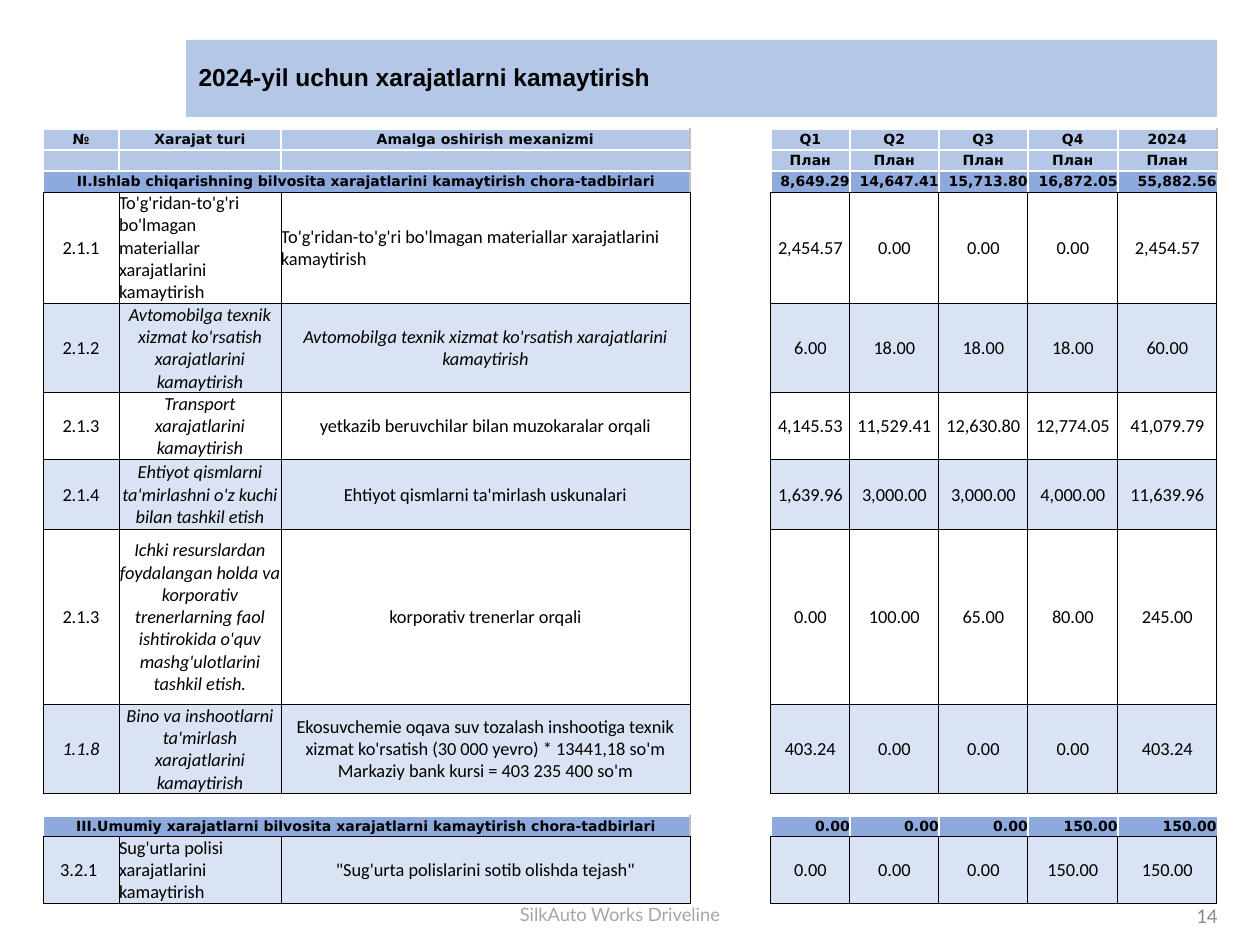
from lxml.etree import SubElement
from pptx import Presentation
from pptx.dml.color import RGBColor
from pptx.enum.text import MSO_ANCHOR, MSO_AUTO_SIZE, PP_ALIGN
from pptx.oxml.ns import qn
from pptx.util import Emu, Pt

COLORS = {"black": "000000", "white": "FFFFFF", "header": "B4C7E7",
          "section": "8EA9DB", "band": "DAE3F3", "edge": "BFBFBF",
          "footer": "A6A6A6", "number": "8C8C8C"}
LEFT, CENTER, RIGHT = PP_ALIGN.LEFT, PP_ALIGN.CENTER, PP_ALIGN.RIGHT

WHITE, GREY, BLACK = ("white", 1.5), ("edge", 1), ("black", 0.5)
COLS = [76, 162, 409, 81, 79, 89, 89, 90, 99]
SPACER, LAST = 3, 8
NUMERIC = range(4, 9)

# kind, height, texts to the left of the spacer, values to its right,
# italic columns, left-aligned columns
ROWS = [
    ("header", 21, ["№", "Xarajat turi", "Amalga oshirish mexanizmi"],
     ["Q1", "Q2", "Q3", "Q4", "2024"], (), ()),
    ("header", 21, ["", "", ""], ["План"] * 5, (), ()),
    ("section", 21,
     ["II.Ishlab chiqarishning bilvosita xarajatlarini kamaytirish chora-tadbirlari", "", ""],
     ["8,649.29", "14,647.41", "15,713.80", "16,872.05", "55,882.56"], (), NUMERIC),
    ("plain", 112,
     ["2.1.1", "To'g'ridan-to'g'ri bo'lmagan materiallar xarajatlarini kamaytirish",
      "To'g'ridan-to'g'ri bo'lmagan materiallar xarajatlarini kamaytirish"],
     ["2,454.57", "0.00", "0.00", "0.00", "2,454.57"], (), (1, 2)),
    ("band", 89,
     ["2.1.2", "Avtomobilga texnik xizmat ko'rsatish xarajatlarini kamaytirish",
      "Avtomobilga texnik xizmat ko'rsatish xarajatlarini kamaytirish"],
     ["6.00", "18.00", "18.00", "18.00", "60.00"], (1, 2), ()),
    ("plain", 67,
     ["2.1.3", "Transport xarajatlarini kamaytirish",
      "yetkazib beruvchilar bilan muzokaralar orqali"],
     ["4,145.53", "11,529.41", "12,630.80", "12,774.05", "41,079.79"], (1,), ()),
    ("band", 70,
     ["2.1.4", "Ehtiyot qismlarni ta'mirlashni o'z kuchi bilan tashkil etish",
      "Ehtiyot qismlarni ta'mirlash uskunalari"],
     ["1,639.96", "3,000.00", "3,000.00", "4,000.00", "11,639.96"], (1,), ()),
    ("plain", 175,
     ["2.1.3", "Ichki resurslardan foydalangan holda va korporativ trenerlarning faol "
      "ishtirokida o'quv mashg'ulotlarini tashkil etish.",
      "korporativ trenerlar orqali"],
     ["0.00", "100.00", "65.00", "80.00", "245.00"], (1,), ()),
    ("band", 89,
     ["1.1.8", "Bino va inshootlarni ta'mirlash xarajatlarini kamaytirish",
      "Ekosuvchemie oqava suv tozalash inshootiga texnik xizmat ko'rsatish "
      "(30 000 yevro) * 13441,18 so'm Markaziy bank kursi = 403 235 400 so'm"],
     ["403.24", "0.00", "0.00", "0.00", "403.24"], (0, 1), ()),
    ("gap", 22, [""] * 3, [""] * 5, (), ()),
    ("section", 21,
     ["III.Umumiy xarajatlarni bilvosita xarajatlarni kamaytirish chora-tadbirlari", "", ""],
     ["0.00", "0.00", "0.00", "150.00", "150.00"], (), NUMERIC),
    ("band", 67,
     ["3.2.1", "Sug'urta polisi xarajatlarini kamaytirish",
      "\"Sug'urta polislarini sotib olishda tejash\""],
     ["0.00", "0.00", "0.00", "150.00", "150.00"], (), (1,)),
]


def px(n):
    return Emu(round(n * 914400 / 126))


def rgb(name):
    return RGBColor.from_string(COLORS[name])


def place(sp, box):
    sp.left, sp.top, sp.width, sp.height = map(px, box)


def add_run(p, text, size, font, color="black", bold=False, italic=False):
    r = p.add_run()
    r.text = text
    f = r.font
    f.size, f.name, f.bold, f.italic = Pt(size), font, bold, italic
    f.color.rgb = rgb(color)


def add_title(s, box):
    sp = s.shapes.title
    place(sp, box)
    sp.fill.solid()
    sp.fill.fore_color.rgb = rgb("header")
    tf = sp.text_frame
    tf.word_wrap, tf.auto_size = True, MSO_AUTO_SIZE.NONE
    tf.vertical_anchor = MSO_ANCHOR.MIDDLE
    p = tf.paragraphs[0]
    p.alignment, p.line_spacing = LEFT, 0.9
    add_run(p, "2024-yil uchun xarajatlarni kamaytirish", 14, "Arial", bold=True)


def add_label(s, box, text, size, font, color, align, anchor):
    tf = s.shapes.add_textbox(*map(px, box)).text_frame
    tf.word_wrap, tf.vertical_anchor = True, anchor
    p = tf.paragraphs[0]
    p.alignment = align
    add_run(p, text, size, font, color)


def cell_edges(kind, col):
    """Left, right, top and bottom lines of a cell, by row kind and column."""
    if kind == "gap":
        return (None,) * 4 if col == SPACER else (None, None, BLACK, WHITE)
    data = kind in ("plain", "band")
    if col == SPACER:
        return (BLACK, BLACK, None, None) if data else (GREY, WHITE, None, None)
    if data:
        return (BLACK,) * 4
    if kind == "header":
        return WHITE, GREY if col in (2, LAST) else WHITE, WHITE, WHITE
    right = None if col == LAST else GREY if col < SPACER else WHITE
    return WHITE, right, WHITE, BLACK


def set_edges(cell, edges):
    tcPr = cell._tc.get_or_add_tcPr()
    for side, edge in zip("LRTB", edges):
        ln = SubElement(tcPr, qn(f"a:ln{side}"))
        if edge is None:
            SubElement(ln, qn("a:noFill"))
            continue
        color, width = edge
        ln.set("w", str(Pt(width)))
        fill = SubElement(ln, qn("a:solidFill"))
        SubElement(fill, qn("a:srgbClr")).set("val", COLORS[color])


def fill_cell(cell, kind, col, text, italic, align):
    cell.margin_left = cell.margin_right = cell.margin_top = cell.margin_bottom = 0
    cell.vertical_anchor = MSO_ANCHOR.MIDDLE
    set_edges(cell, cell_edges(kind, col))
    if col == SPACER or kind in ("plain", "gap"):
        cell.fill.background()
    else:
        cell.fill.solid()
        cell.fill.fore_color.rgb = rgb(kind)
    p = cell.text_frame.paragraphs[0]
    p.alignment = align
    if not text:
        SubElement(p._p, qn("a:endParaRPr")).set("sz", "800")
    elif kind in ("header", "section"):
        add_run(p, text, 8, "DejaVu Sans", bold=True)
    else:
        add_run(p, text, 10.5, "Calibri", italic=italic)
        if text == "3.2.1":
            add_run(p, ".", 10.5, "Calibri", "white")


def add_cost_table(s, left, top):
    heights = [row[1] for row in ROWS]
    box = left, top, sum(COLS), sum(heights)
    table = s.shapes.add_table(len(ROWS), len(COLS), *map(px, box)).table
    table.first_row = table.horz_banding = False
    for column, width in zip(table.columns, COLS):
        column.width = px(width)
    for i, (kind, height, labels, values, italics, aligned) in enumerate(ROWS):
        table.rows[i].height = px(height)
        side = RIGHT if kind == "section" else LEFT
        for col, text in enumerate([*labels, "", *values]):
            fill_cell(table.cell(i, col), kind, col, text, col in italics,
                      side if col in aligned else CENTER)
        if kind == "section":
            table.cell(i, 0).merge(table.cell(i, SPACER - 1))


def main():
    prs = Presentation()
    prs.slide_width, prs.slide_height = px(1260), px(945)
    s = prs.slides.add_slide(prs.slide_layouts[5])
    add_label(s, (478, 897, 284, 35), "SilkAuto Works Driveline", 10.5, "Lato",
              "footer", CENTER, MSO_ANCHOR.TOP)
    add_title(s, (186, 40, 1031, 77))
    add_label(s, (946, 890, 284, 50), "14", 12, "Calibri",
              "number", RIGHT, MSO_ANCHOR.MIDDLE)
    add_cost_table(s, 43, 129)
    prs.save("out.pptx")


if __name__ == "__main__":
    main()
